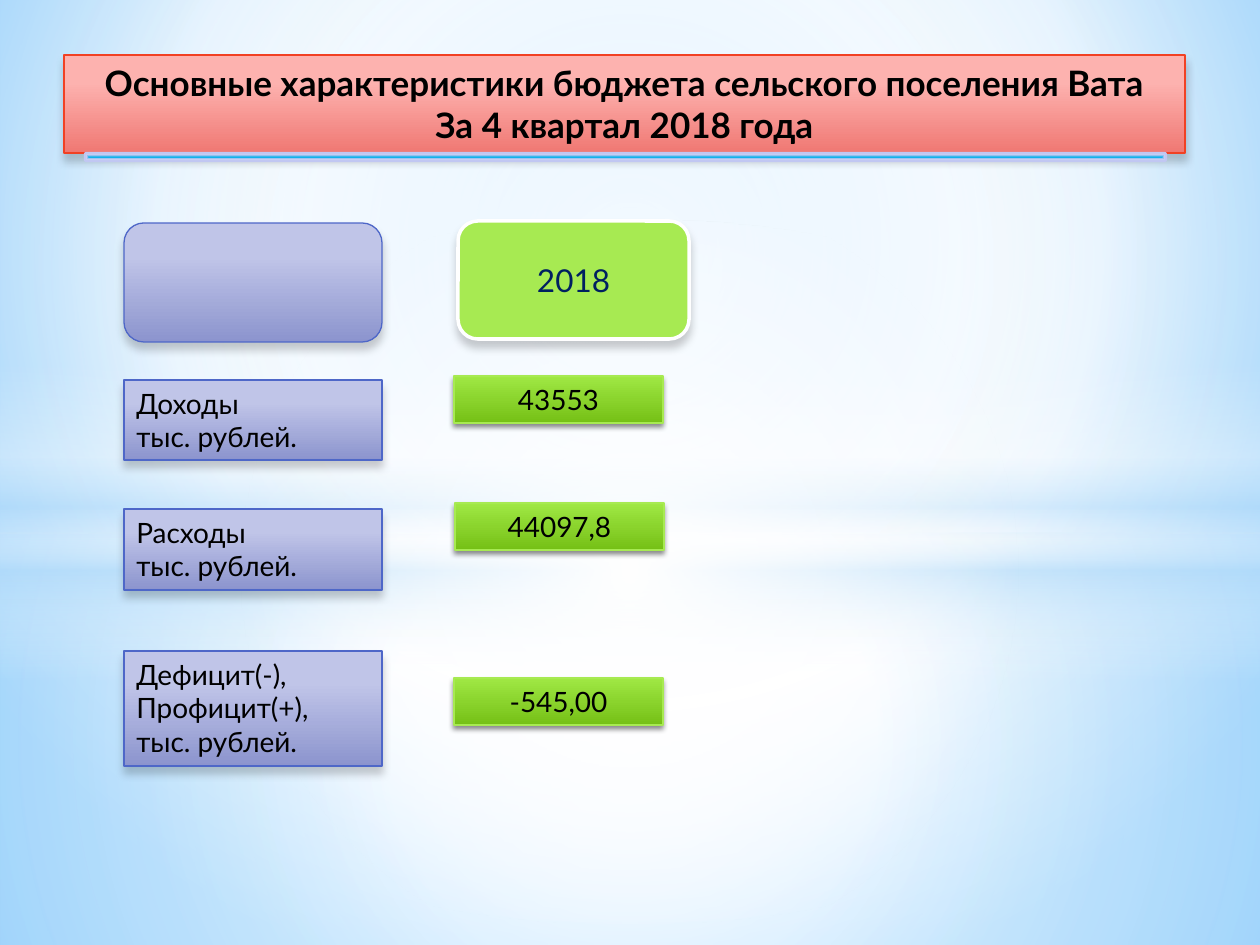
from lxml import etree
from pptx import Presentation
from pptx import util as u
from pptx.dml.color import RGBColor
from pptx.enum import shapes, text
from pptx.oxml import ns

PX = 914400 / 126
COLORS = {
    "white": "FFFFFF", "black": "000000", "navy": "002060", "haze": "B4DCFA",
    "sky": "9ED5FF", "deep sky": "5BB9FF", "red": "F14124",
    "pink": "FDB2AF", "coral": "F07873", "blue": "4E67C8",
    "lilac": "C0C5E8", "violet": "8C94CE", "lime": "A7EA52",
    "light green": "A0E844", "green": "75C016",
    "cyan": "12B2EB", "lavender": "C1C7F2", "pale": "E1E3F8",
}
RECT = shapes.MSO_SHAPE.RECTANGLE
ROUND = shapes.MSO_SHAPE.ROUNDED_RECTANGLE
OVAL = shapes.MSO_SHAPE.OVAL
LEFT, CENTER = text.PP_ALIGN.LEFT, text.PP_ALIGN.CENTER


def add_color(parent, name, opacity):
    color = etree.SubElement(parent, ns.qn("a:srgbClr"), val=COLORS[name])
    if opacity < 100:
        etree.SubElement(color, ns.qn("a:alpha"), val=str(opacity * 1000))


def paint(fill, holder, stops, path=None, focus=(50, 50, 50, 50)):
    fill.solid()
    solid = holder.find(".//" + ns.qn("a:solidFill"))
    gradient = etree.Element(ns.qn("a:gradFill"), rotWithShape="1")
    stop_list = etree.SubElement(gradient, ns.qn("a:gsLst"))
    for position, name, *opacity in stops:
        stop = etree.SubElement(stop_list, ns.qn("a:gs"), pos=str(position * 1000))
        add_color(stop, name, opacity[0] if opacity else 100)
    if path:
        shade = etree.SubElement(gradient, ns.qn("a:path"), path=path)
        sides = {side: str(value * 1000) for side, value in zip("ltrb", focus)}
        etree.SubElement(shade, ns.qn("a:fillToRect"), **sides)
    else:
        etree.SubElement(gradient, ns.qn("a:lin"), ang="5400000", scaled="0")
    solid.getparent().replace(solid, gradient)


deck = Presentation()
deck.slide_width, deck.slide_height = u.Inches(10), u.Inches(7.5)
page = deck.slides.add_slide(deck.slide_layouts[5])
title = page.shapes.title

backdrop = page.background.fill
paint(backdrop, page.element.cSld.bg,
      [(0, "sky"), (60, "white"), (100, "deep sky")], "circle", (20, 10, 20, 60))

glows = [
    (RECT, (0, 533, 1260, 412), "circle",
     [(0, "white", 91), (37, "white", 76), (100, "haze", 79)]),
    (RECT, (0, 0, 1260, 533), "circle",
     [(0, "white", 89), (48, "white", 62), (100, "haze", 79)]),
    (RECT, (0, 365, 1260, 315), None,
     [(0, "white", 0), (29, "white", 30), (45, "haze", 40),
      (55, "white", 26), (65, "haze", 60), (100, "white", 0)]),
    (OVAL, (0, 220, 1260, 703), "circle", [(0, "white"), (54, "white", 0)]),
]
for kind, bounds, path, stops in glows:
    glow = page.shapes.add_shape(kind, *[round(n * PX) for n in bounds])
    paint(glow.fill, glow.element.spPr, stops, path)
    glow.line.fill.background()
    glow.shadow.inherit = False

title.element.getparent().append(title.element)

SOFT, TIGHT = (20, 5, 4), (45, 3.1, 1.8)
STYLES = {
    "title": ([(28, "pink"), (100, "coral")], None, "red", 0.75, SOFT, 20, "black", CENTER),
    "label": ([(28, "lilac"), (100, "violet")], None, "blue", 0.75, SOFT, 16, "black", LEFT),
    "year": ([(0, "lime"), (100, "lime")], None, "white", 2, SOFT, 18, "navy", CENTER),
    "rule": ([(0, "cyan"), (50, "lavender"), (100, "pale")], "rect",
             "lavender", 1.25, None, 16, "black", CENTER),
    "value": ([(0, "light green"), (100, "green")], None, "lime", 0.75, TIGHT, 16, "black", CENTER),
}
blocks = [
    ("title", None, (64, 55, 1121, 98),
     ["Основные характеристики бюджета сельского поселения Вата", "За 4 квартал 2018 года"]),
    ("label", ROUND, (124, 223, 258, 119), []),
    ("year", ROUND, (458, 221, 231, 118), ["2018"]),
    ("label", RECT, (124, 380, 258, 80), ["Доходы", "тыс. рублей."]),
    ("label", RECT, (124, 509, 258, 81), ["Расходы", "тыс. рублей."]),
    ("label", RECT, (124, 651, 258, 115), ["Дефицит(-),", "Профицит(+),", "тыс. рублей."]),
    ("rule", ROUND, (85, 153, 1081, 8), []),
    ("value", RECT, (454, 376, 209, 47), ["43553"]),
    ("value", RECT, (455, 503, 209, 47), ["44097,8"]),
    ("value", RECT, (454, 678, 209, 47), ["-545,00"]),
]
for style, kind, bounds, lines in blocks:
    stops, path, edge, weight, shadow, size, ink, align = STYLES[style]
    box = page.shapes.add_shape(kind, 0, 0, 0, 0) if kind else title
    box.left, box.top, box.width, box.height = [round(n * PX) for n in bounds]
    paint(box.fill, box.element.spPr, stops, path)
    box.line.color.rgb = RGBColor.from_string(COLORS[edge])
    box.line.width = u.Pt(weight)
    box.shadow.inherit = False
    if shadow:
        opacity, blur, distance = shadow
        effects = box.element.spPr.find(ns.qn("a:effectLst"))
        drop = etree.SubElement(effects, ns.qn("a:outerShdw"), blurRad=str(u.Pt(blur)),
                                dist=str(u.Pt(distance)), dir="5400000", rotWithShape="0")
        add_color(drop, "black", opacity)
    if not lines:
        continue
    frame = box.text_frame
    frame.word_wrap = style != "title"
    frame.auto_size = text.MSO_AUTO_SIZE.NONE
    frame.vertical_anchor = text.MSO_ANCHOR.MIDDLE if style == "year" else text.MSO_ANCHOR.TOP
    frame.text = "\n".join(lines)
    for paragraph in frame.paragraphs:
        paragraph.alignment = align
        paragraph.font.name = "Lato"
        paragraph.font.size = u.Pt(size)
        paragraph.font.bold = style == "title"
        paragraph.font.color.rgb = RGBColor.from_string(COLORS[ink])

deck.save("out.pptx")
